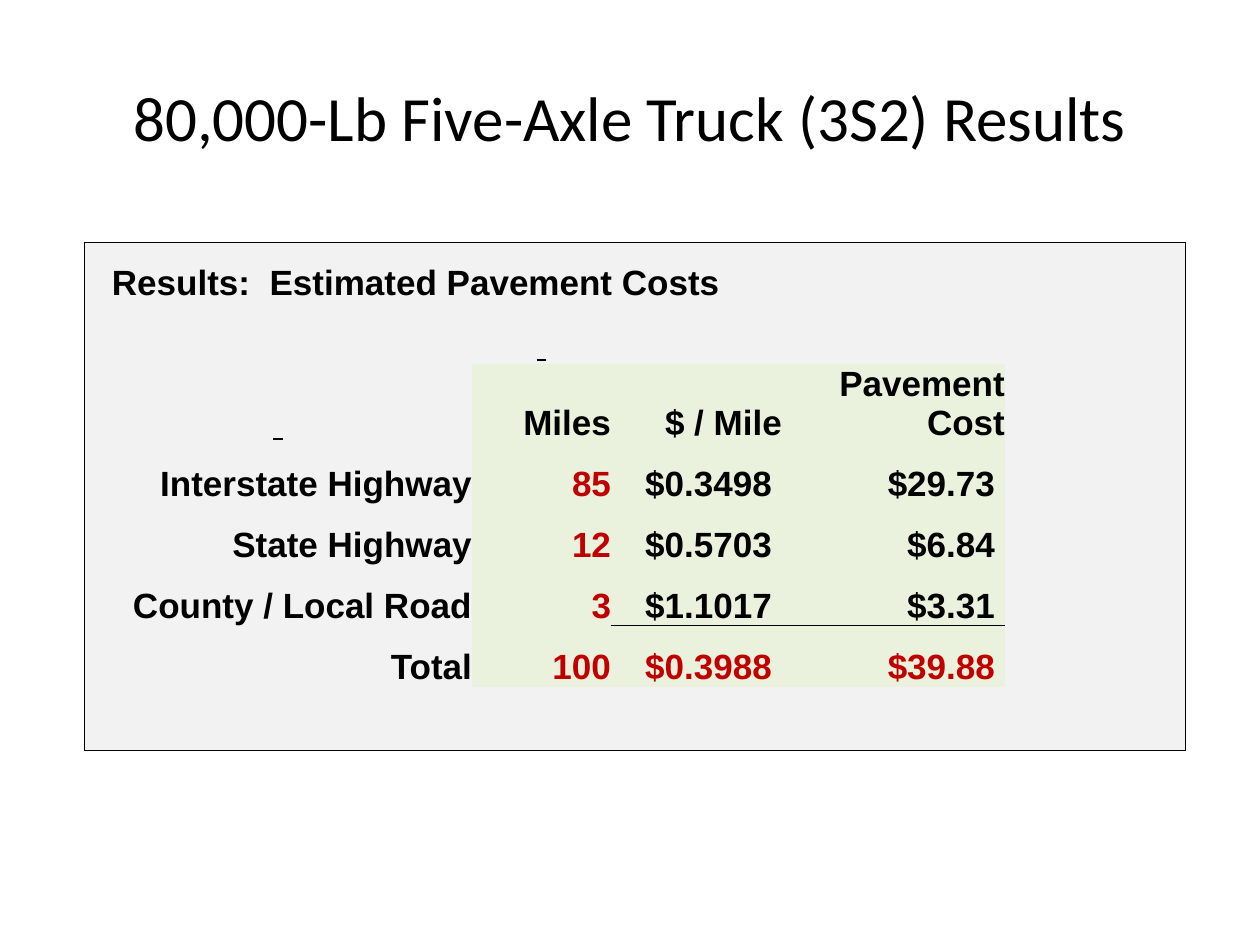
from lxml import etree
from pptx import Presentation
from pptx import util as u
from pptx.dml.color import RGBColor
from pptx.enum import text
from pptx.oxml.ns import qn

theme = {
    "ink": "000000", "red": "C00000", "grey": "F2F2F2", "green": "EAF1DD",
    "head": "Calibri", "body": "Arial", "big": 36, "small": 20, "line": 0.5,
    "plain": "{2D5ABB26-0587-4C30-8999-92F81FD0307C}",
}


def px(n):
    return u.Emu(round(n * 914400 / 126))


def style(font, **form):
    for key, val in form.items():
        setattr(font, key, val)


deck = Presentation()
deck.slide_width, deck.slide_height = px(1260), px(945)
slide = deck.slides.add_slide(deck.slide_layouts[5])

title = slide.shapes.title
for key, val in {"left": 63, "top": 38, "width": 1134, "height": 157}.items():
    setattr(title, key, px(val))
title.text_frame.vertical_anchor = text.MSO_ANCHOR.MIDDLE
para = title.text_frame.paragraphs[0]
para.alignment = text.PP_ALIGN.CENTER
run = para.add_run()
run.text = "80,000-Lb Five-Axle Truck (3S2) Results"
style(run.font, name=theme["head"], size=u.Pt(theme["big"]))
run.font.color.rgb = RGBColor.from_string(theme["ink"])

rows = [
    ["Results:  Estimated Pavement Costs", "", "", "", ""],
    ["", " ", "", "", ""],
    [" ", "Miles", "$ / Mile", "Pavement Cost", ""],
    ["Interstate Highway", "85", "$0.3498", "$29.73", ""],
    ["State Highway", "12", "$0.5703", "$6.84", ""],
    ["County / Local Road", "3", "$1.1017", "$3.31", ""],
    ["Total", "100", "$0.3988", "$39.88", ""],
    ["", "", "", "", ""],
]
wides = [388, 139, 171, 223, 181]
highs = [61, 61, 79, 61, 61, 61, 61, 64]
last, edge = len(rows) - 1, len(wides) - 1

frame = slide.shapes.add_table(len(rows), len(wides), px(84), px(242),
                               px(sum(wides)), px(sum(highs)))
grid = frame.table
grid.first_row = grid.horz_banding = False
frame._element.find(".//" + qn("a:tableStyleId")).text = theme["plain"]
for col, wide in zip(grid.columns, wides):
    col.width = px(wide)
for row, high in zip(grid.rows, highs):
    row.height = px(high)
grid.cell(0, 0).merge(grid.cell(0, 2))

for r, words in enumerate(rows):
    for c, word in enumerate(words):
        cell = grid.cell(r, c)
        core = 2 <= r < last and 1 <= c < edge
        cash = 3 <= r < last and c in (2, 3)
        sums = {
            "lnL": c == 0,
            "lnR": c == edge,
            "lnT": r == 0 or (r == 6 and cash),
            "lnB": r == last or (r == 5 and cash),
        }
        props = cell._tc.get_or_add_tcPr()
        for side, shown in sums.items():
            line = etree.SubElement(props, qn("a:" + side), w=str(u.Pt(theme["line"])))
            kind = "a:solidFill" if shown else "a:noFill"
            paint = etree.SubElement(line, qn(kind))
            if shown:
                etree.SubElement(paint, qn("a:srgbClr"), val=theme["ink"])
        cell.fill.solid()
        cell.fill.fore_color.rgb = RGBColor.from_string(theme["green" if core else "grey"])
        form = {
            "margin_left": px(28 if r == 0 and c == 0 else 0),
            "margin_right": px(10 if cash else 0),
            "margin_top": 0,
            "margin_bottom": 0,
            "vertical_anchor": text.MSO_ANCHOR.BOTTOM,
        }
        for key, val in form.items():
            setattr(cell, key, val)
        para = cell.text_frame.paragraphs[0]
        para.font.size = u.Pt(theme["small"])
        if not word:
            continue
        blank = word == " "
        side = "CENTER" if blank else "LEFT" if r == 0 else "RIGHT"
        para.alignment = text.PP_ALIGN[side]
        run = para.add_run()
        run.text = word
        style(run.font, name=theme["body"], size=u.Pt(theme["small"]),
              bold=True, underline=blank)
        hot = core and r > 2 and (c == 1 or r == 6)
        run.font.color.rgb = RGBColor.from_string(theme["red" if hot else "ink"])

deck.save("out.pptx")
